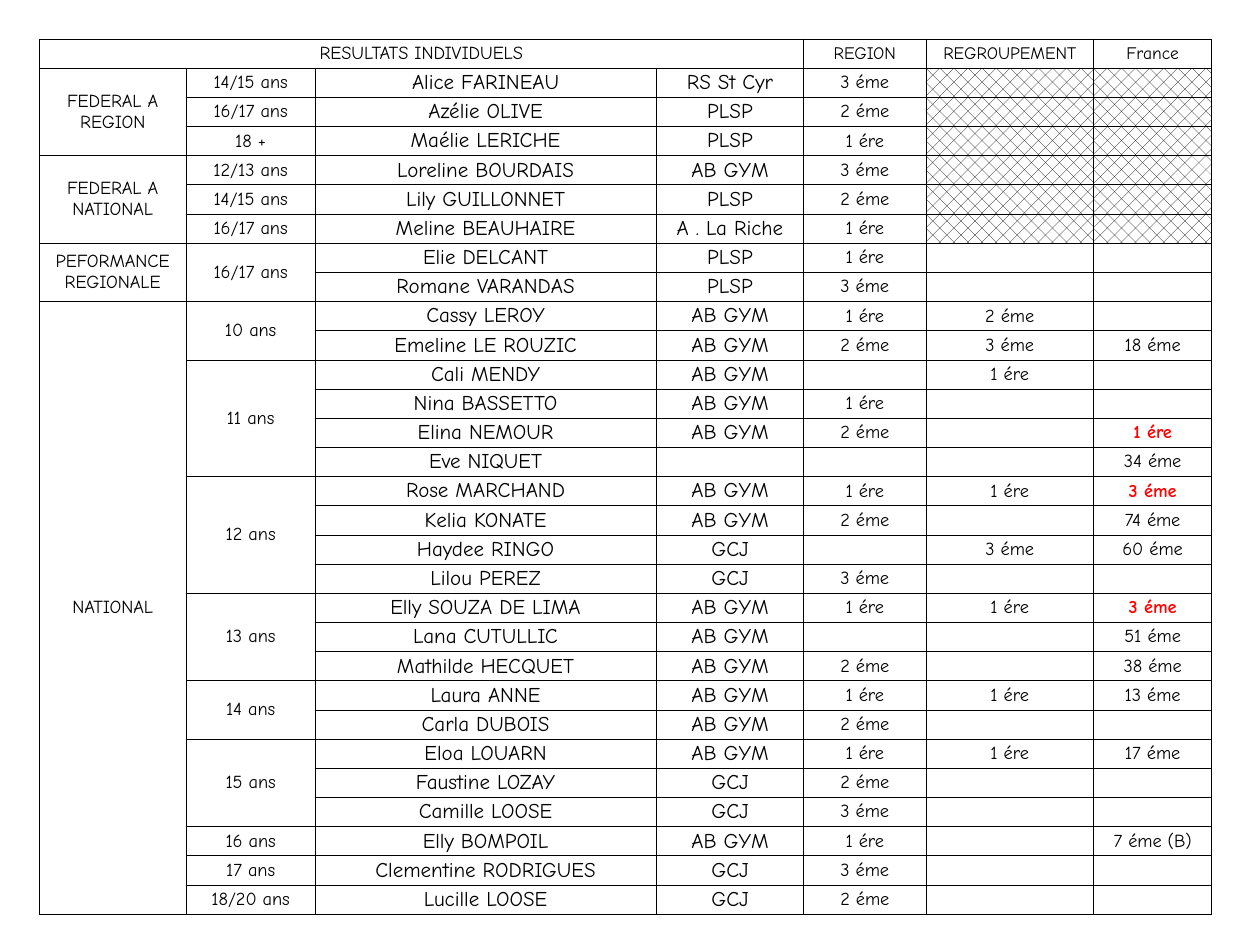
"""Build the slide of individual gymnastics results as one table."""
import dataclasses

import lxml.etree
import pptx
import pptx.dml.color
import pptx.enum.dml
import pptx.enum.text
import pptx.oxml.ns
import pptx.util


@dataclasses.dataclass(frozen=True)
class Theme:
    """Colours, type sizes and line width of the slide."""
    font: str = "Comic Neue"
    ink: str = "000000"
    paper: str = "FFFFFF"
    podium: str = "FF0000"
    small: float = 10
    base: float = 10.5
    large: float = 12
    rule: float = 0.5


THEME = Theme()
SLIDE_SIZE = (10, 7.5)
TABLE_AT = (0.31, 0.31)
TABLE_HEIGHT = 6.95
COLUMN_WIDTHS = (1.17, 1.02, 2.71, 1.17, 0.97, 1.33, 0.94)
NAME, CLUB, REGION, REGROUPEMENT, FRANCE = range(2, 7)
HEADINGS = {REGION: "REGION", REGROUPEMENT: "REGROUPEMENT", FRANCE: "France"}
PODIUM = ("1 ére", "2 éme", "3 éme")

RESULTS = {
    "FEDERAL A REGION": {
        "14/15 ans": ["Alice FARINEAU|RS St Cyr|3 éme||"],
        "16/17 ans": ["Azélie OLIVE|PLSP|2 éme||"],
        "18 +": ["Maélie LERICHE|PLSP|1 ére||"],
    },
    "FEDERAL A NATIONAL": {
        "12/13 ans": ["Loreline BOURDAIS|AB GYM|3 éme||"],
        "14/15 ans": ["Lily GUILLONNET|PLSP|2 éme||"],
        "16/17 ans": ["Meline BEAUHAIRE|A . La Riche|1 ére||"],
    },
    "PEFORMANCE REGIONALE": {
        "16/17 ans": ["Elie DELCANT|PLSP|1 ére||",
                      "Romane VARANDAS|PLSP|3 éme||"],
    },
    "NATIONAL": {
        "10 ans": ["Cassy LEROY|AB GYM|1 ére|2 éme|",
                   "Emeline LE ROUZIC|AB GYM|2 éme|3 éme|18 éme"],
        "11 ans": ["Cali MENDY|AB GYM||1 ére|",
                   "Nina BASSETTO|AB GYM|1 ére||",
                   "Elina NEMOUR|AB GYM|2 éme||1 ére",
                   "Eve NIQUET||||34 éme"],
        "12 ans": ["Rose MARCHAND|AB GYM|1 ére|1 ére|3 éme",
                   "Kelia KONATE|AB GYM|2 éme||74 éme",
                   "Haydee RINGO|GCJ||3 éme|60 éme",
                   "Lilou PEREZ|GCJ|3 éme||"],
        "13 ans": ["Elly SOUZA DE LIMA|AB GYM|1 ére|1 ére|3 éme",
                   "Lana CUTULLIC|AB GYM|||51 éme",
                   "Mathilde HECQUET|AB GYM|2 éme||38 éme"],
        "14 ans": ["Laura ANNE|AB GYM|1 ére|1 ére|13 éme",
                   "Carla DUBOIS|AB GYM|2 éme||"],
        "15 ans": ["Eloa LOUARN|AB GYM|1 ére|1 ére|17 éme",
                   "Faustine LOZAY|GCJ|2 éme||",
                   "Camille LOOSE|GCJ|3 éme||"],
        "16 ans": ["Elly BOMPOIL|AB GYM|1 ére||7 éme (B)"],
        "17 ans": ["Clementine RODRIGUES|GCJ|3 éme||"],
        "18/20 ans": ["Lucille LOOSE|GCJ|2 éme||"],
    },
}


def rgb(value):
    """Return the colour object for a hex string."""
    return pptx.dml.color.RGBColor.from_string(value)


def sub(parent, tag, **attributes):
    """Append a DrawingML child element and return it."""
    return lxml.etree.SubElement(parent, pptx.oxml.ns.qn(tag), attributes)


def draw_borders(cell):
    """Rule all four sides of a cell."""
    properties = cell._tc.get_or_add_tcPr()
    for side in ("a:lnL", "a:lnR", "a:lnT", "a:lnB"):
        line = sub(properties, side, w=str(pptx.util.Pt(THEME.rule)))
        sub(sub(line, "a:solidFill"), "a:srgbClr", val=THEME.ink)


def format_cell(cell):
    """Give a cell its rules, no fill, no margins and a compact empty line."""
    draw_borders(cell)
    cell.fill.background()
    layout = {"margin_left": 0, "margin_right": 0, "margin_top": 0, "margin_bottom": 0,
              "vertical_anchor": pptx.enum.text.MSO_ANCHOR.MIDDLE}
    for name, value in layout.items():
        setattr(cell, name, value)
    p = cell.text_frame.paragraphs[0]
    p.alignment = pptx.enum.text.PP_ALIGN.CENTER
    sub(p._p, "a:endParaRPr", sz=str(int(THEME.base * 100)))


def write(cell, text, size=THEME.base, color=THEME.ink, bold=False):
    """Write one run of text in a cell."""
    if not text:
        return
    r = cell.text_frame.paragraphs[0].add_run()
    r.text = text
    for name, value in {"name": THEME.font, "size": pptx.util.Pt(size), "bold": bold}.items():
        setattr(r.font, name, value)
    r.font.color.rgb = rgb(color)


def hatch(cell):
    """Fill a cell that does not apply with a pattern."""
    cell.fill.patterned()
    cell.fill.pattern = pptx.enum.dml.MSO_PATTERN.PERCENT_25
    cell.fill.fore_color.rgb = rgb(THEME.ink)
    cell.fill.back_color.rgb = rgb(THEME.paper)


def write_group(table, top, column, text, count):
    """Merge a group's rows in one column and label them."""
    cell = table.cell(top, column)
    if count > 1:
        cell.merge(table.cell(top + count - 1, column))
    write(cell, text)


def write_result(table, row, result, regional_only):
    """Write one gymnast's name, club and ranks."""
    for column, text in enumerate(result.split("|"), NAME):
        cell = table.cell(row, column)
        style = {"size": THEME.large} if column in (NAME, CLUB) else {}
        if column == FRANCE and text in PODIUM:
            style = {"color": THEME.podium, "bold": True}
        write(cell, text, **style)
        if regional_only and column in (REGROUPEMENT, FRANCE):
            hatch(cell)


def write_headings(table):
    """Write the heading row."""
    table.cell(0, 0).merge(table.cell(0, CLUB))
    write(table.cell(0, 0), "RESULTATS INDIVIDUELS")
    for column, text in HEADINGS.items():
        write(table.cell(0, column), text, size=THEME.small)


def write_results(table):
    """Write every category, age group and gymnast from top to bottom."""
    row = 1
    for category, ages in RESULTS.items():
        write_group(table, row, 0, category, sum(map(len, ages.values())))
        for age, results in ages.items():
            write_group(table, row, 1, age, len(results))
            for result in results:
                write_result(table, row, result, category.startswith("FEDERAL"))
                row += 1


def add_grid(s):
    """Add the empty ruled table and return it."""
    count = 1 + sum(len(results) for ages in RESULTS.values() for results in ages.values())
    box = map(pptx.util.Inches, (*TABLE_AT, sum(COLUMN_WIDTHS), TABLE_HEIGHT))
    table = s.shapes.add_table(count, len(COLUMN_WIDTHS), *box).table
    table.first_row = table.horz_banding = False
    for column, width in zip(table.columns, COLUMN_WIDTHS):
        column.width = pptx.util.Inches(width)
    for cell in table.iter_cells():
        format_cell(cell)
    return table


def main():
    """Build and save the slide."""
    prs = pptx.Presentation()
    prs.slide_width, prs.slide_height = map(pptx.util.Inches, SLIDE_SIZE)
    s = prs.slides.add_slide(prs.slide_layouts[6])
    table = add_grid(s)
    write_headings(table)
    write_results(table)
    prs.save("out.pptx")


if __name__ == "__main__":
    main()
